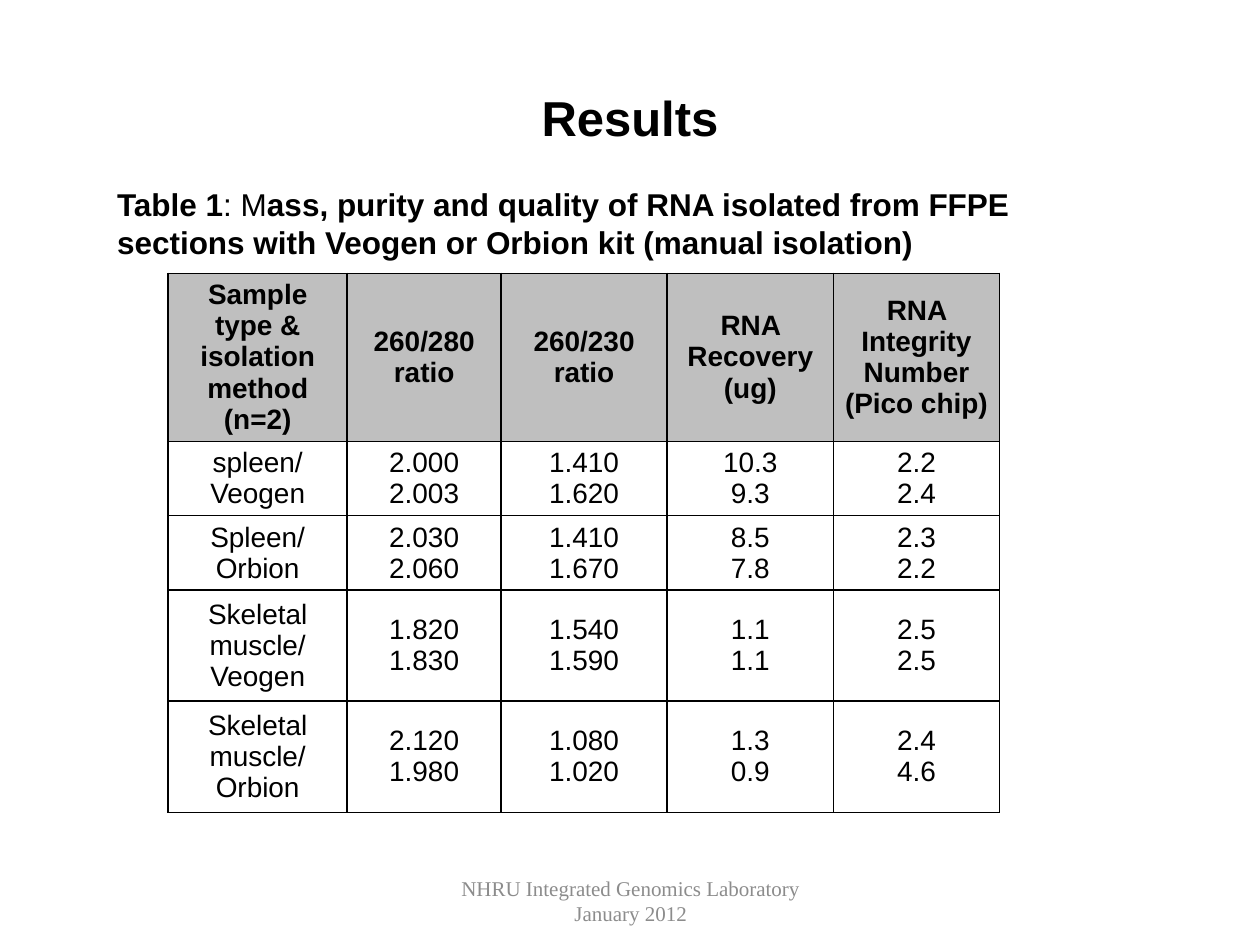
from lxml import etree
from pptx import Presentation
from pptx.dml.color import RGBColor
from pptx.enum.text import MSO_ANCHOR, PP_ALIGN
from pptx.oxml.ns import qn
from pptx.util import Cm, Pt

CENTER = PP_ALIGN.CENTER
LEFT = PP_ALIGN.LEFT
MIDDLE = MSO_ANCHOR.MIDDLE
TITLE_ONLY = 5

BLACK, GRAY, HEADER_FILL = "000000", "8C8C8C", "BFBFBF"
COLUMN_WIDTHS = [3.61, 3.1, 3.35, 3.35, 3.35]
ROW_HEIGHTS = [3.38, 1.5, 1.5, 2.24, 2.24]
# A line break inside a cell starts a new paragraph.
TABLE_ROWS = [
    ["Sample type & isolation method (n=2)", "260/280 ratio", "260/230 ratio",
     "RNA Recovery (ug)", "RNA Integrity Number (Pico chip)"],
    ["spleen/\nVeogen", "2.000\n2.003", "1.410\n1.620", "10.3\n9.3", "2.2\n2.4"],
    ["Spleen/\nOrbion", "2.030\n2.060", "1.410\n1.670", "8.5\n7.8", "2.3\n2.2"],
    ["Skeletal muscle/\nVeogen", "1.820\n1.830", "1.540\n1.590", "1.1\n1.1", "2.5\n2.5"],
    ["Skeletal muscle/\nOrbion", "2.120\n1.980", "1.080\n1.020", "1.3\n0.9", "2.4\n4.6"],
]


def color(value):
    return RGBColor.from_string(value)


def format_text(frame, size, bold=False, font="Arial", fill=BLACK, align=CENTER):
    for para in frame.paragraphs:
        para.alignment = align
        para.font.name = font
        para.font.size = Pt(size)
        para.font.bold = bold
        para.font.color.rgb = color(fill)


def add_title(page, text):
    title = page.shapes.title
    title.left, title.top, title.width, title.height = Cm(1.27), Cm(0.76), Cm(22.86), Cm(3.18)
    title.text_frame.text = text
    title.text_frame.vertical_anchor = MIDDLE
    format_text(title.text_frame, 28, bold=True)


def add_text_box(page, left, top, width, height):
    frame = page.shapes.add_textbox(Cm(left), Cm(top), Cm(width), Cm(height)).text_frame
    frame.word_wrap = True
    return frame


def add_caption(page):
    frame = add_text_box(page, 2.11, 3.61, 19.48, 2.57)
    para = frame.paragraphs[0]
    for text, bold in [
        ("Table 1", True),
        (": M", False),
        ("ass, purity and quality of RNA isolated from FFPE "
         "sections with Veogen or Orbion kit (manual isolation)", True),
    ]:
        span = para.add_run()
        span.text = text
        span.font.bold = bold
    format_text(frame, 18, align=LEFT)


def add_footer(page, text):
    frame = add_text_box(page, 8.69, 17.65, 8.05, 1.02)
    frame.vertical_anchor = MIDDLE
    frame.text = text
    format_text(frame, 12, font="Times New Roman", fill=GRAY)


def add_borders(cell):
    properties = cell._tc.get_or_add_tcPr()
    for side in ("a:lnL", "a:lnR", "a:lnT", "a:lnB"):
        line = etree.SubElement(properties, qn(side), w=str(Pt(1)))
        fill = etree.SubElement(line, qn("a:solidFill"))
        etree.SubElement(fill, qn("a:srgbClr"), val=BLACK)


def fill_cell(cell, text, is_header):
    cell.text = text
    cell.vertical_anchor = MIDDLE
    cell.margin_left = cell.margin_right = Cm(0.18)
    cell.margin_top = cell.margin_bottom = 0
    format_text(cell.text_frame, 16, bold=is_header)
    add_borders(cell)
    if is_header:
        cell.fill.solid()
        cell.fill.fore_color.rgb = color(HEADER_FILL)
    else:
        cell.fill.background()


def add_results_table(page):
    table = page.shapes.add_table(
        len(ROW_HEIGHTS), len(COLUMN_WIDTHS), Cm(3.39), Cm(5.51),
        Cm(sum(COLUMN_WIDTHS)), Cm(sum(ROW_HEIGHTS))).table
    table.first_row = table.horz_banding = False
    for column, width in zip(table.columns, COLUMN_WIDTHS):
        column.width = Cm(width)
    for index, (row, height) in enumerate(zip(table.rows, ROW_HEIGHTS)):
        row.height = Cm(height)
        for cell, text in zip(row.cells, TABLE_ROWS[index]):
            fill_cell(cell, text, is_header=index == 0)


def main():
    deck = Presentation()
    deck.slide_width, deck.slide_height = Cm(25.4), Cm(19.05)
    page = deck.slides.add_slide(deck.slide_layouts[TITLE_ONLY])
    add_title(page, "Results")
    add_footer(page, "NHRU Integrated Genomics Laboratory January 2012")
    add_caption(page)
    add_results_table(page)
    deck.save("out.pptx")


if __name__ == "__main__":
    main()
